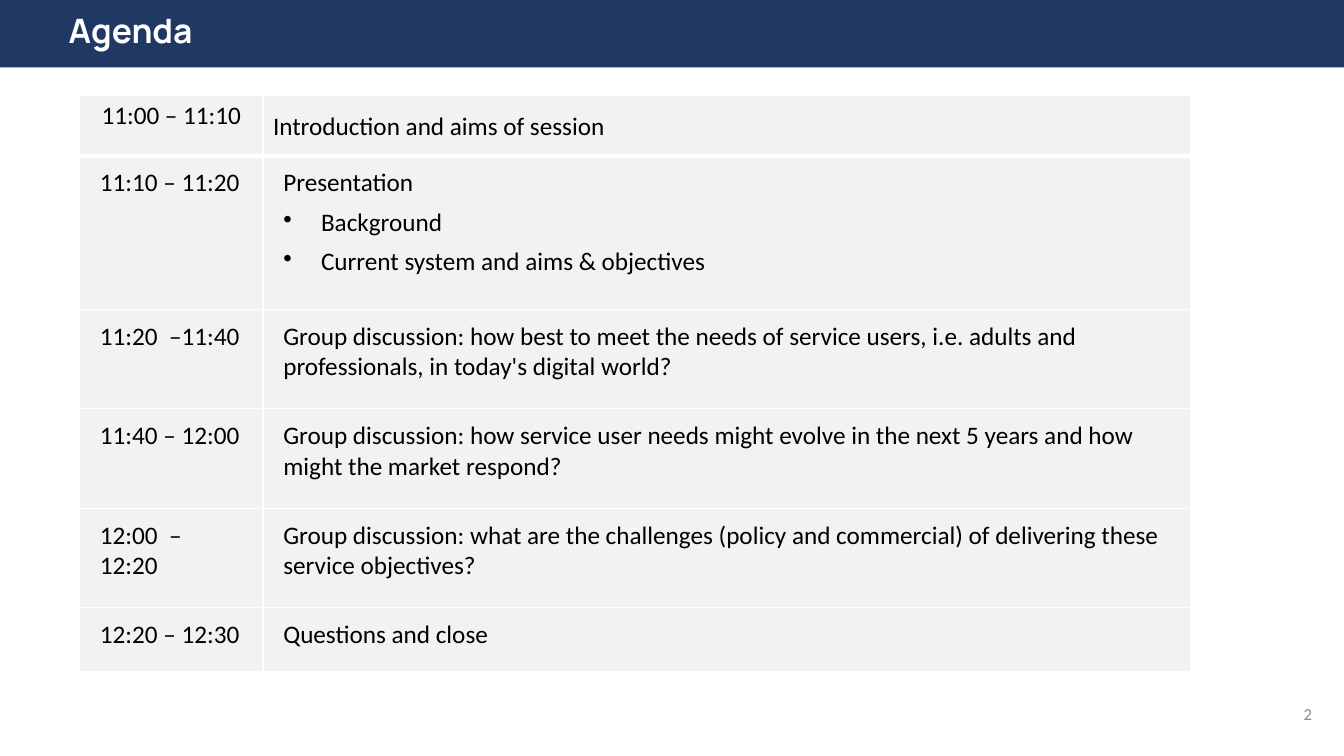
"""Build the agenda slide: a title band above a timetable."""
import pptx
import pptx.dml.color
import pptx.enum.shapes
import pptx.enum.text
import pptx.oxml
import pptx.oxml.ns
import pptx.util
from pptx.util import Cm

NAVY = pptx.dml.color.RGBColor(0x20, 0x38, 0x64)
WHITE = pptx.dml.color.RGBColor(0xFF, 0xFF, 0xFF)
BLACK = pptx.dml.color.RGBColor(0, 0, 0)
PALE = pptx.dml.color.RGBColor(0xF2, 0xF2, 0xF2)
GREY = pptx.dml.color.RGBColor(0x8C, 0x8C, 0x8C)

COLUMN_WIDTHS = (4.62, 23.37)
ROW_HEIGHTS = (1.52, 3.86, 2.51, 2.51, 2.51, 1.6)
PADDING = (0.51, 0.3, 0.51, 0.3)
OPENING_PADDING = ((0.55, 0.13, 0.25, 0.13), (0.25, 0.41, 0.25, 0.13))
AGENDA = (
    ("11:00 – 11:10", "Introduction and aims of session"),
    ("11:10 – 11:20", "Presentation",
     "Background", "Current system and aims & objectives"),
    ("11:20  –11:40", "Group discussion: how best to meet the needs of service "
     "users, i.e. adults and professionals, in today's digital world?"),
    ("11:40 – 12:00", "Group discussion: how service user needs might evolve "
     "in the next 5 years and how might the market respond?"),
    ("12:00  – 12:20", "Group discussion: what are the challenges (policy and "
     "commercial) of delivering these service objectives?"),
    ("12:20 – 12:30", "Questions and close"),
)


def write(para, text, font="Calibri", size=18, color=BLACK, bold=False,
          align=None, before=None, line_spacing=None):
    """Put one formatted span of text into a paragraph."""
    span = para.add_run()
    span.text = text
    span.font.name = font
    span.font.size = pptx.util.Pt(size)
    span.font.color.rgb = color
    span.font.bold = bold
    para.alignment = align
    para.line_spacing = line_spacing
    if before is not None:
        para.space_before = pptx.util.Pt(before)


def set_margins(holder, margins):
    """Set the left, top, right and bottom margins in centimetres."""
    (holder.margin_left, holder.margin_top,
     holder.margin_right, holder.margin_bottom) = map(Cm, margins)


def add_band(page, width, height):
    """Draw the title band across the top of the page."""
    band = page.shapes.add_shape(
        pptx.enum.shapes.MSO_SHAPE.RECTANGLE, 0, 0, width, height)
    band.shadow.inherit = False
    band.fill.solid()
    band.fill.fore_color.rgb = NAVY
    band.line.fill.background()


def add_label(page, place, text, margins, anchor, **text_format):
    """Add a one-line text box."""
    box = page.shapes.add_textbox(*map(Cm, place))
    frame = box.text_frame
    frame.word_wrap = True
    frame.vertical_anchor = anchor
    set_margins(frame, margins)
    write(frame.paragraphs[0], text, **text_format)


def add_bullet(para):
    """Give a paragraph a hanging bullet."""
    properties = para._p.get_or_add_pPr()
    properties.set("marL", str(Cm(0.95)))
    properties.set("indent", str(-Cm(0.95)))
    bullet = pptx.oxml.parse_xml(
        f'<a:buChar {pptx.oxml.ns.nsdecls("a")} char="•"/>')
    properties.append(bullet)


def set_borders(cell, **widths):
    """Draw white borders; widths are points by side L, R, T and B."""
    properties = cell._tc.get_or_add_tcPr()
    for index, side in enumerate("LRTB"):
        width = pptx.util.Pt(widths.get(side, 1))
        border = pptx.oxml.parse_xml(
            f'<a:ln{side} {pptx.oxml.ns.nsdecls("a")} w="{width}"><a:solidFill>'
            f'<a:srgbClr val="{WHITE}"/></a:solidFill></a:ln{side}>')
        properties.insert(index, border)


def fill_cell(cell, lines, margins, **borders):
    """Write a heading and its bullets into a cell."""
    cell.fill.solid()
    cell.fill.fore_color.rgb = PALE
    set_margins(cell, margins)
    set_borders(cell, **borders)
    frame = cell.text_frame
    before = 6 if len(lines) > 1 else None
    for number, line in enumerate(lines):
        para = frame.add_paragraph() if number else frame.paragraphs[0]
        write(para, line, before=before)
        if number:
            add_bullet(para)


def add_timetable(page, left, top):
    """Add the table of times and sessions."""
    table = page.shapes.add_table(
        len(AGENDA), len(COLUMN_WIDTHS), left, top,
        Cm(sum(COLUMN_WIDTHS)), Cm(sum(ROW_HEIGHTS))).table
    table.horz_banding = False
    for column, width in zip(table.columns, COLUMN_WIDTHS):
        column.width = Cm(width)
    for number, (time, *session) in enumerate(AGENDA):
        table.rows[number].height = Cm(ROW_HEIGHTS[number])
        borders = {0: {"B": 3}, 1: {"T": 3}}.get(number, {})
        paddings = (PADDING, PADDING) if number else OPENING_PADDING
        for column, lines in enumerate(([time], session)):
            fill_cell(table.cell(number, column), lines,
                      paddings[column], **borders)


def main():
    """Build and save the deck."""
    deck = pptx.Presentation()
    deck.slide_width, deck.slide_height = Cm(33.87), Cm(19.05)
    page = deck.slides.add_slide(deck.slide_layouts[6])
    anchors = pptx.enum.text.MSO_ANCHOR
    add_band(page, deck.slide_width, Cm(1.7))
    add_label(page, (1.73, 0.03, 31.09, 1.85), "Agenda",
              (0, 0.33, 0.33, 0.33), anchors.TOP, font="Manrope", size=24,
              color=WHITE, bold=True, line_spacing=0.9)
    add_label(page, (31.37, 17.27, 2.03, 1.45), "2", (0.33,) * 4,
              anchors.MIDDLE, size=12, color=GREY,
              align=pptx.enum.text.PP_ALIGN.RIGHT)
    add_timetable(page, Cm(2.01), Cm(2.41))
    deck.save("out.pptx")


if __name__ == "__main__":
    main()
